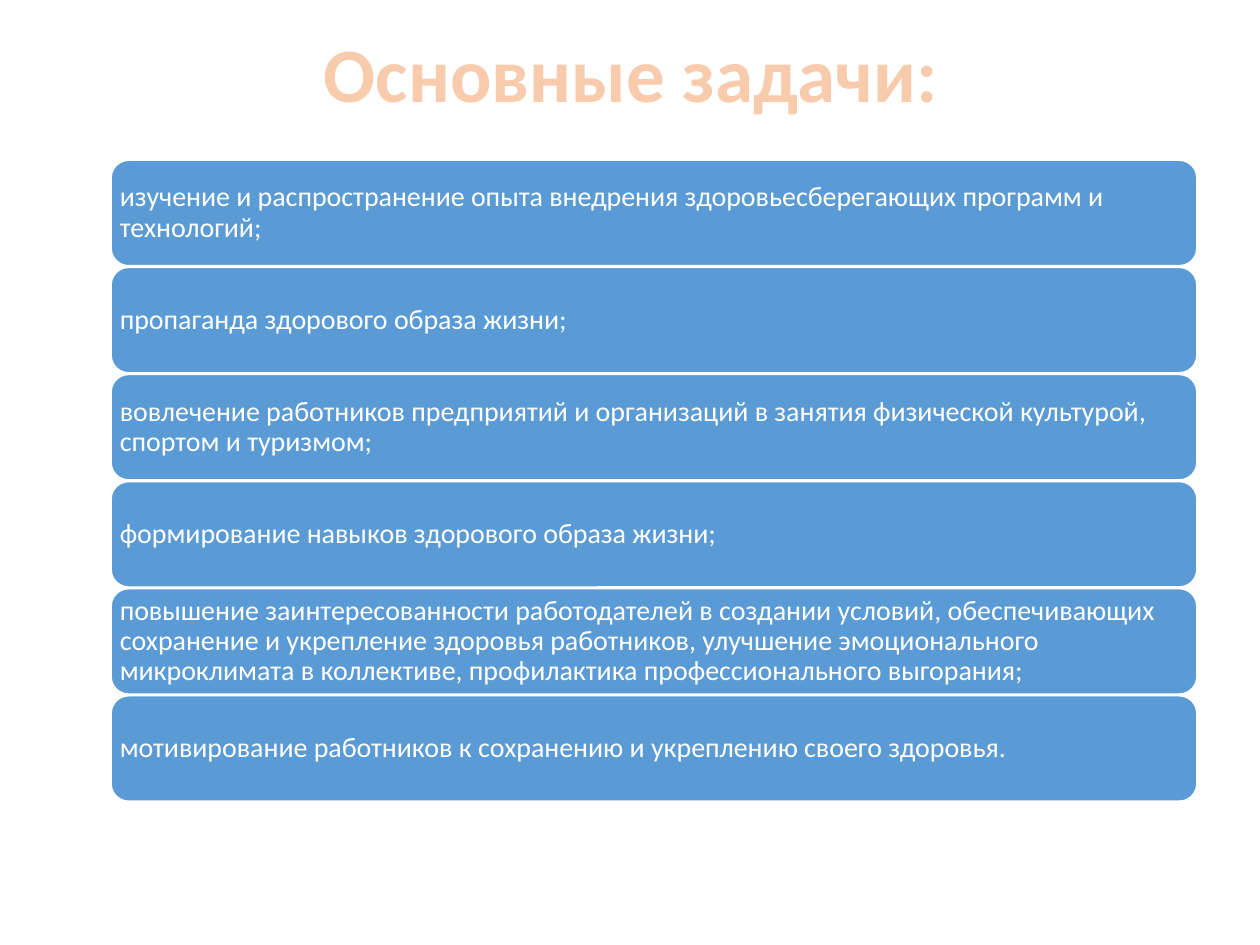
from pptx import Presentation
from pptx.dml.color import RGBColor
from pptx.enum.shapes import MSO_SHAPE as Shape
from pptx.enum.text import MSO_ANCHOR as Anchor, PP_ALIGN as Align
from pptx.util import Pt

TASKS = [
    "изучение и распространение опыта внедрения здоровьесберегающих программ и технологий;",
    "пропаганда здорового образа жизни;",
    "вовлечение работников предприятий и организаций в занятия физической культурой, "
    "спортом и туризмом;",
    "формирование навыков здорового образа жизни;",
    "повышение заинтересованности работодателей в создании условий, обеспечивающих "
    "сохранение и укрепление здоровья работников, улучшение эмоционального "
    "микроклимата в коллективе, профилактика профессионального выгорания;",
    "мотивирование работников к сохранению и укреплению своего здоровья.",
]
TASK_LEFT, TASK_TOP, TASK_WIDTH, TASK_HEIGHT = 63.4, 91.5, 620.6, 60.4
TASK_PITCH = 61.2


def color(hex_string):
    return RGBColor.from_string(hex_string)


def assign(target, values):
    """Set each attribute of target named in the dict."""
    for name, value in values.items():
        setattr(target, name, value)


class TaskSlide:
    FONT = "Calibri"
    PEACH, BLUE, WHITE = "F8CBAD", "5B9BD5", "FFFFFF"
    # Rounded corners already push the text inwards by about 3 pt
    TASK_INSET = 2.1

    def __init__(self, slide):
        self.slide = slide

    def label(self, holder, text, size, ink, align, inset, bold=False):
        """Fill a shape or text box with one styled paragraph."""
        frame = holder.text_frame
        margins = ("margin_left", "margin_top", "margin_right", "margin_bottom")
        assign(frame, {"word_wrap": True, "vertical_anchor": Anchor.MIDDLE,
                       **dict.fromkeys(margins, Pt(inset))})
        paragraph = frame.paragraphs[0]
        assign(paragraph, {"alignment": align, "line_spacing": 0.9})
        run = paragraph.add_run()
        run.text = text
        assign(run.font, {"name": self.FONT, "size": Pt(size), "bold": bold})
        run.font.color.rgb = color(ink)

    def title(self, text, left, top, width, height):
        heading = self.slide.shapes.add_textbox(Pt(left), Pt(top), Pt(width), Pt(height))
        self.label(heading, text, 44, self.PEACH, Align.CENTER, 3.6, bold=True)

    def task(self, text, left, top, width, height):
        bar = self.slide.shapes.add_shape(
            Shape.ROUNDED_RECTANGLE, Pt(left), Pt(top), Pt(width), Pt(height))
        bar.shadow.inherit = False
        bar.fill.solid()
        bar.fill.fore_color.rgb = color(self.BLUE)
        bar.line.color.rgb = color(self.WHITE)
        bar.line.width = Pt(1)
        self.label(bar, text, 16, self.WHITE, Align.LEFT, self.TASK_INSET)


def main():
    deck = Presentation()
    assign(deck, {"slide_width": Pt(720), "slide_height": Pt(540)})
    page = TaskSlide(deck.slides.add_slide(deck.slide_layouts[6]))
    for row, task in enumerate(TASKS):
        page.task(task, TASK_LEFT, TASK_TOP + row * TASK_PITCH, TASK_WIDTH, TASK_HEIGHT)
    page.title("Основные задачи:", 50.4, -7.9, 620.6, 104.4)
    deck.save("out.pptx")


if __name__ == "__main__":
    main()
